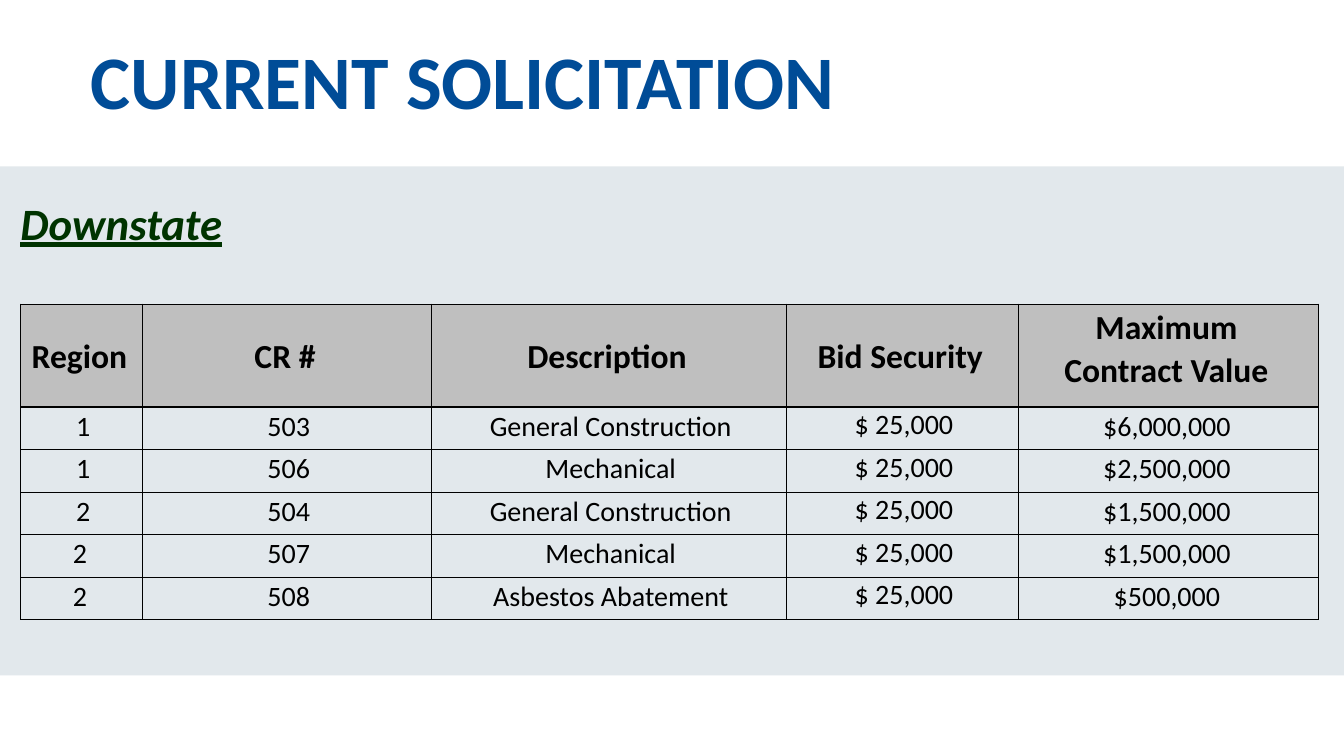
from pptx import Presentation
from pptx.dml.color import RGBColor
from pptx.enum.shapes import MSO_SHAPE
from pptx.enum.text import MSO_ANCHOR as ANCHOR, MSO_AUTO_SIZE as AUTO, PP_ALIGN as ALIGN
from pptx.oxml import parse_xml
from pptx.oxml.ns import nsdecls
from pptx.util import Pt

BLUE = RGBColor(0x00, 0x4C, 0x97)
GREEN = RGBColor(0x00, 0x33, 0x00)
BLACK = RGBColor(0x00, 0x00, 0x00)
GREY = RGBColor(0xBF, 0xBF, 0xBF)
MIST = RGBColor(0xBF, 0xCE, 0xD6)

TITLE = {"size": Pt(54), "bold": True}
REGION = {"size": Pt(32), "bold": True, "italic": True, "underline": True}
HEAD = {"size": Pt(24), "bold": True}
BODY = {"size": Pt(20), "bold": False}

COLUMNS = [87.1, 206.6, 253.4, 165.6, 214.6]
HEADINGS = ["Region ", "CR # ", "Description ", "Bid Security ", "Maximum \nContract Value "]
SOLICITATIONS = [
    ["1", "503", "General Construction", "$ 25,000", "$6,000,000 "],
    ["1", "506", "Mechanical", "$ 25,000", "$2,500,000 "],
    ["2", "504", "General Construction", "$ 25,000", "$1,500,000 "],
    ["2 ", "507", "Mechanical", "$ 25,000", "$1,500,000 "],
    ["2 ", "508", "Asbestos Abatement", "$ 25,000", "$500,000 "],
]


class Deck:
    font = "Calibri"

    def __init__(self, width, height):
        self.prs = Presentation()
        self.prs.slide_width, self.prs.slide_height = Pt(width), Pt(height)
        self.s = self.prs.slides.add_slide(self.prs.slide_layouts[5])

    def text(self, tf, text, color, style, align=ALIGN.LEFT, spacing=1.0):
        tf.text = text
        for p in tf.paragraphs:
            p.alignment, p.line_spacing = align, spacing
            for r in p.runs:
                r.font.name = self.font
                r.font.color.rgb = color
                for key, value in style.items():
                    setattr(r.font, key, value)

    def title(self, text, left, top, width, height):
        sp = self.s.shapes.title
        sp.left, sp.top, sp.width, sp.height = map(Pt, (left, top, width, height))
        sp.text_frame.auto_size = AUTO.NONE
        sp.text_frame.vertical_anchor = ANCHOR.MIDDLE
        self.text(sp.text_frame, text, BLUE, TITLE, spacing=0.9)

    def band(self, left, top, width, height, color, opacity):
        sp = self.s.shapes.add_shape(MSO_SHAPE.RECTANGLE, *map(Pt, (left, top, width, height)))
        sp.shadow.inherit = False
        sp.line.fill.background()
        sp.fill.solid()
        sp.fill.fore_color.rgb = color
        srgb = sp.element.spPr.find(".//{*}srgbClr")
        srgb.append(parse_xml(f'<a:alpha {nsdecls("a")} val="{opacity * 1000}"/>'))

    def label(self, text, left, top, width, height):
        tf = self.s.shapes.add_textbox(*map(Pt, (left, top, width, height))).text_frame
        tf.word_wrap = True
        tf.vertical_anchor = ANCHOR.MIDDLE
        self.text(tf, text, GREEN, REGION, spacing=0.97)

    def border(self, cell):
        tc_pr = cell._tc.get_or_add_tcPr()
        for i, side in enumerate(("lnL", "lnR", "lnT", "lnB")):
            tc_pr.insert(i, parse_xml(
                f'<a:{side} {nsdecls("a")} w="{Pt(1)}"><a:solidFill>'
                f'<a:srgbClr val="{BLACK}"/></a:solidFill></a:{side}>'))

    def cell(self, cell, text, heading):
        cell.margin_left, cell.margin_right = Pt(7.2), Pt(5)
        cell.margin_top = cell.margin_bottom = 0
        centred = heading and "\n" not in text
        cell.vertical_anchor = ANCHOR.MIDDLE if centred else ANCHOR.TOP
        if heading:
            cell.fill.solid()
            cell.fill.fore_color.rgb = GREY
        else:
            cell.fill.background()
        self.border(cell)
        spacing = 1.03 if text.startswith("$ ") else 1.07
        self.text(cell.text_frame, text, BLACK, HEAD if heading else BODY, ALIGN.CENTER, spacing)

    def table(self, rows, columns, left, top, head_height, row_height):
        heights = [head_height] + [row_height] * (len(rows) - 1)
        box = map(Pt, (left, top, sum(columns), sum(heights)))
        table = self.s.shapes.add_table(len(rows), len(columns), *box).table
        table.first_row = table.horz_banding = False
        for column, width in zip(table.columns, columns):
            column.width = Pt(width)
        for i, (row, height) in enumerate(zip(table.rows, heights)):
            row.height = Pt(height)
            for cell, text in zip(row.cells, rows[i]):
                self.cell(cell, text, i == 0)


def main():
    deck = Deck(960, 540)
    deck.band(0, 118.8, 960, 363.6, MIST, 45)
    deck.title("CURRENT SOLICITATION", 57.6, 15.8, 841, 90)
    deck.table([HEADINGS] + SOLICITATIONS, COLUMNS, 14.8, 217.4, 73.4, 30.4)
    deck.label("Downstate", 7.5, 142.6, 164.2, 35.3)
    deck.prs.save("out.pptx")


if __name__ == "__main__":
    main()
